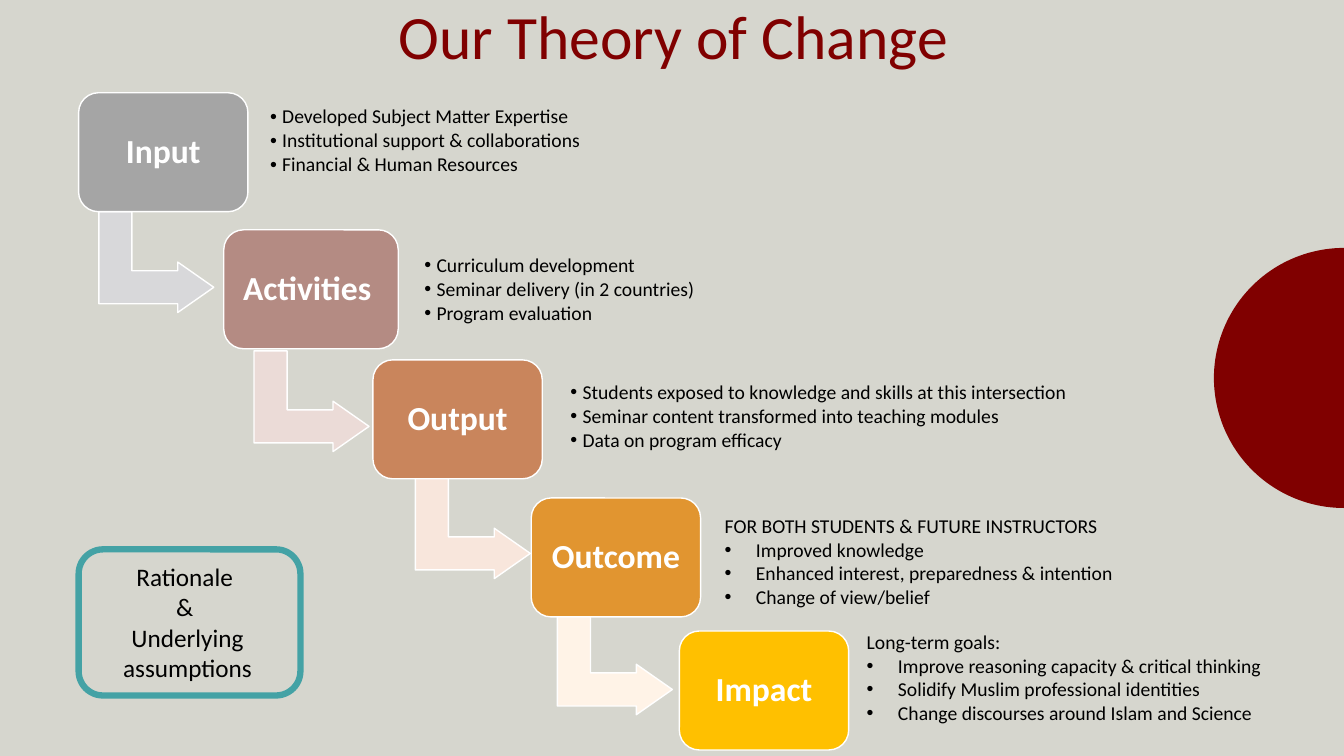
import math
from lxml import etree
from pptx import Presentation
from pptx.dml.color import RGBColor
from pptx.enum.shapes import MSO_SHAPE
from pptx.enum.text import MSO_ANCHOR, PP_ALIGN
from pptx.oxml.ns import qn
from pptx.util import Inches, Pt

ROUND, BENT = MSO_SHAPE.ROUNDED_RECTANGLE, MSO_SHAPE.BENT_UP_ARROW
LEFT, CENTER = PP_ALIGN.LEFT, PP_ALIGN.CENTER
TOP, MIDDLE = MSO_ANCHOR.TOP, MSO_ANCHOR.MIDDLE
MAROON, WHITE, TEAL = "800000", "FFFFFF", "44A2A5"

prs = Presentation()
prs.slide_width, prs.slide_height = Inches(13.33), Inches(7.5)
COL, ROW = prs.slide_width / 100, prs.slide_height / 100
s = prs.slides.add_slide(prs.slide_layouts[6])
s.background.fill.solid()
s.background.fill.fore_color.rgb = RGBColor.from_string("D6D6CE")


def paint(sp, fill=None, line=None, width=1):
    sp.shadow.inherit = False
    for part, color in ((sp.fill, fill), (sp.line.fill, line)):
        if color:
            part.solid()
            part.fore_color.rgb = RGBColor.from_string(color)
        else:
            part.background()
    if line:
        sp.line.width = Pt(width)


def write(sp, text, size=14, color="000000", bold=False, align=LEFT, anchor=TOP,
          inset=(0.1, 0.05), spacing=1.0, after=0, indent=0, heading=False):
    tf = sp.text_frame
    tf.word_wrap, tf.vertical_anchor = True, anchor
    tf.margin_left = tf.margin_right = Inches(inset[0])
    tf.margin_top = tf.margin_bottom = Inches(inset[1])
    for i, line in enumerate(text.split("\n")):
        p = tf.paragraphs[0] if i == 0 else tf.add_paragraph()
        p.alignment, p.line_spacing, p.space_after = align, spacing, Pt(after)
        r = p.add_run()
        r.text = line
        r.font.name, r.font.size, r.font.bold = "Calibri", Pt(size), bold
        r.font.color.rgb = RGBColor.from_string(color)
        if indent and not (heading and i == 0):
            pPr = p._p.get_or_add_pPr()
            pPr.set("marL", str(Inches(indent)))
            pPr.set("indent", str(-Inches(indent)))
            etree.SubElement(pPr, qn("a:buFont")).set("typeface", "Arial")
            etree.SubElement(pPr, qn("a:buChar")).set("char", "•")


radius, steps = 17.2 * ROW, 90
rim = [(prs.slide_width - radius * math.sin(math.pi * i / steps),
        50 * ROW - radius * math.cos(math.pi * i / steps)) for i in range(steps + 1)]
fb = s.shapes.build_freeform(*rim[0])
fb.add_line_segments(rim[1:], close=True)
paint(fb.convert_to_shape(), MAROON)

title = s.shapes.add_textbox(7 * COL, 0, 86.25 * COL, 10.4 * ROW)
write(title, "Our Theory of Change", size=44, color=MAROON, align=CENTER,
      anchor=MIDDLE, spacing=0.9)

arrows = [
    (7.88, 27.07, "D8D8DA"),
    (19.43, 45.47, "EBDBD7"),
    (31.43, 62.27, "F8E6DC"),
    (42, 80.27, "FFF3E7"),
]
for x, y, color in arrows:
    sp = s.shapes.add_shape(BENT, x * COL, y * ROW, 7.5 * COL, 15.2 * ROW)
    sp.rotation = 90
    for i, value in enumerate((0.328, 0.25, 0.358)):
        sp.adjustments[i] = value
    paint(sp, color, WHITE)

stages = [
    ("Input", 5.85, 12.27, 12.6, "A5A5A5"),
    ("Activities ", 16.65, 30.4, 12.98, "B48B83"),
    ("Output", 27.75, 47.6, 12.6, "C9855C"),
    ("Outcome", 39.53, 65.87, 12.6, "E19530"),
    ("Impact", 50.55, 83.47, 12.6, "FFC000"),
]
for name, x, y, w, color in stages:
    sp = s.shapes.add_shape(ROUND, x * COL, y * ROW, w * COL, 15.73 * ROW)
    paint(sp, color, WHITE)
    write(sp, name, size=24, color=WHITE, bold=True, align=CENTER, anchor=MIDDLE,
          spacing=0.9)

compact = dict(anchor=MIDDLE, inset=(0.06, 0.06), spacing=0.9, after=2, indent=0.12)
headed = dict(indent=0.31, heading=True)
notes = [
    (19.65, 12.4, 26.25, 12.67, compact,
     "Developed Subject Matter Expertise\nInstitutional support & collaborations\n"
     "Financial & Human Resources"),
    (31.13, 32, 31.5, 12.67, compact,
     "Curriculum development\nSeminar delivery (in 2 countries)\nProgram evaluation"),
    (42, 48.8, 38.7, 12.67, compact,
     "Students exposed to knowledge and skills at this intersection\n"
     "Seminar content transformed into teaching modules\nData on program efficacy"),
    (53.18, 67.33, 31.28, 17.07, headed,
     "FOR BOTH STUDENTS & FUTURE INSTRUCTORS\nImproved knowledge\n"
     "Enhanced interest, preparedness & intention\nChange of view/belief"),
    (63.75, 82.67, 33.68, 13.87, headed,
     "Long-term goals:\nImprove reasoning capacity & critical thinking\n"
     "Solidify Muslim professional identities\n"
     "Change discourses around Islam and Science"),
    (5.7, 73.6, 16.5, 17.47, dict(size=18, align=CENTER),
     "Rationale \n& \nUnderlying assumptions"),
]
for x, y, w, h, style, text in notes:
    write(s.shapes.add_textbox(x * COL, y * ROW, w * COL, h * ROW), text, **style)

frame = s.shapes.add_shape(ROUND, 5.85 * COL, 72.67 * ROW, 16.5 * COL, 19.33 * ROW)
paint(frame, line=TEAL, width=4.5)

prs.save("out.pptx")
